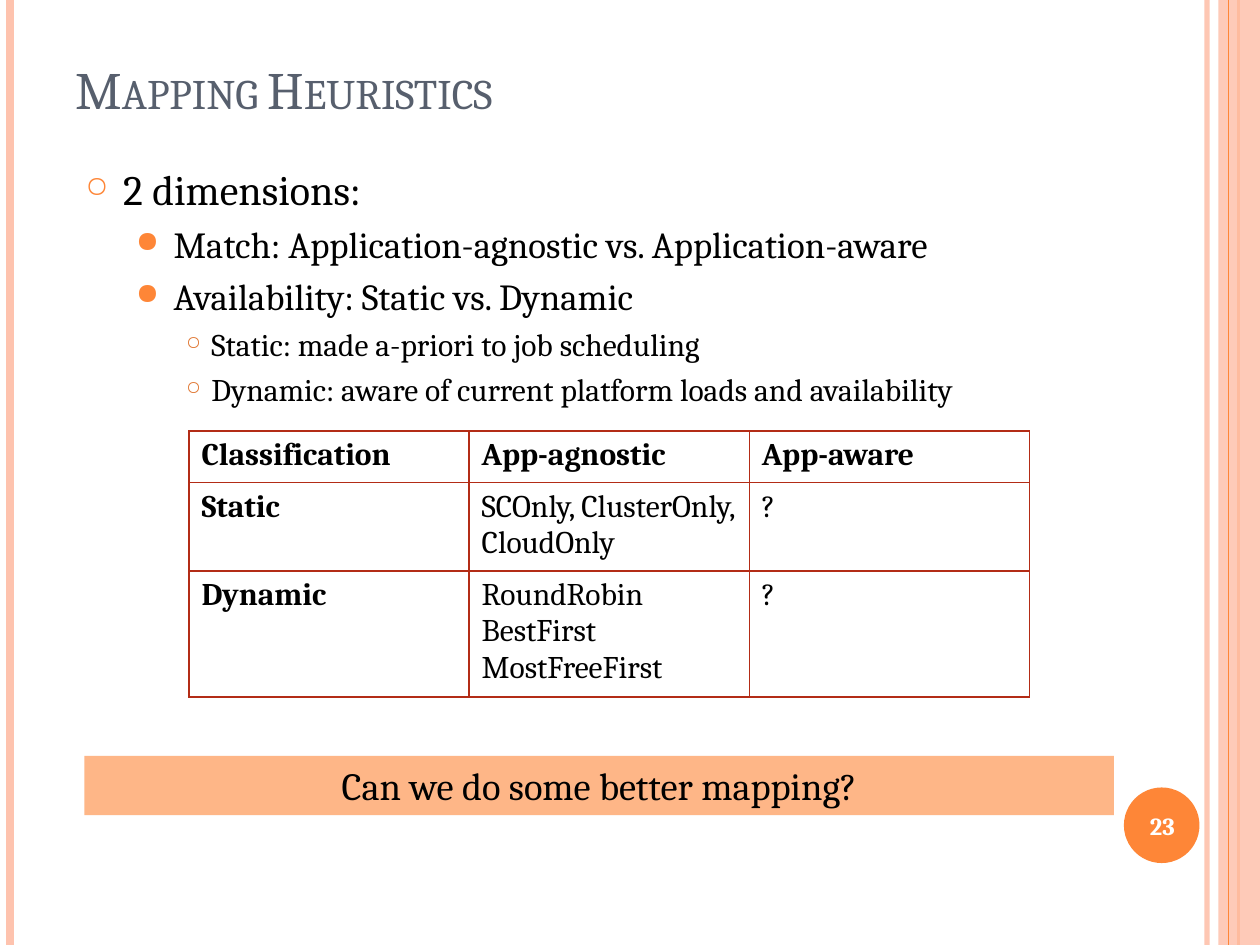
from lxml.etree import SubElement
from pptx import Presentation
from pptx.dml.color import RGBColor
from pptx.enum.shapes import MSO_CONNECTOR, MSO_SHAPE
from pptx.enum.text import MSO_ANCHOR, PP_ALIGN
from pptx.oxml.ns import qn
from pptx.util import Inches, Pt

FONT = "Cambria"
BLACK = "000000"
ORANGE = "FE8637"
PEACH = "FEC3AE"
RUST = "B32C16"


def colour(value):
    return RGBColor.from_string(value)


def add_node(parent, tag, **values):
    return SubElement(parent, qn(tag), values)


def set_opacity(element, percent):
    for node in element.iter(qn("a:srgbClr")):
        add_node(node, "a:alpha", val=str(percent * 1000))


class SlideBuilder:
    def __init__(self, page):
        self.page = page

    def add_span(self, para, text, size, ink=BLACK, bold=False):
        span = para.add_run()
        span.text = text
        for name, value in {"name": FONT, "size": Pt(size), "bold": bold}.items():
            setattr(span.font, name, value)
        span.font.color.rgb = colour(ink)
        return span

    def vertical_line(self, left, ink, width, opacity=100):
        line = self.page.shapes.add_connector(
            MSO_CONNECTOR.STRAIGHT, Inches(left), 0, Inches(left), Inches(7.5))
        line.line.color.rgb = colour(ink)
        line.line.width = Pt(width)
        properties = line._element.spPr
        if opacity < 100:
            set_opacity(properties, opacity)
        add_node(properties, "a:effectLst")

    def block(self, kind, place, ink, opacity=100):
        shape = self.page.shapes.add_shape(kind, *map(Inches, place))
        shape.shadow.inherit = False
        shape.fill.solid()
        shape.fill.fore_color.rgb = colour(ink)
        shape.line.fill.background()
        if opacity < 100:
            set_opacity(shape._element.spPr, opacity)
        return shape

    def text_box(self, place, anchor=MSO_ANCHOR.TOP):
        frame = self.page.shapes.add_textbox(*map(Inches, place)).text_frame
        frame.word_wrap = True
        frame.vertical_anchor = anchor
        return frame

    def bullet(self, para, text, style):
        para.space_before = Pt(style["before"])
        properties = para._p.get_or_add_pPr()
        properties.set("marL", str(Inches(style["margin"])))
        properties.set("indent", str(-Inches(style["hang"])))
        tint = add_node(properties, "a:buClr")
        add_node(tint, "a:srgbClr", val=style["tint"])
        add_node(properties, "a:buSzPct", val=str(style["scale"] * 1000))
        add_node(properties, "a:buChar", char=style["mark"])
        self.add_span(para, text, style["size"])

    def table(self, place, heights, rows):
        table = self.page.shapes.add_table(
            len(rows), len(rows[0]), *map(Inches, place)).table
        table.first_row = table.horz_banding = False
        for row, height in zip(table.rows, heights):
            row.height = Inches(height)
        for r, row in enumerate(rows):
            for c, text in enumerate(row):
                self.cell(table.cell(r, c), text, bold=r == 0 or c == 0)

    def cell(self, cell, text, bold):
        properties = cell._tc.get_or_add_tcPr()
        for side in "LRTB":
            border = add_node(properties, f"a:ln{side}", w=str(Pt(1)))
            fill = add_node(border, "a:solidFill")
            add_node(fill, "a:srgbClr", val=RUST)
        cell.fill.background()
        frame = cell.text_frame
        for i, line in enumerate(text.split("\n")):
            para = frame.add_paragraph() if i else frame.paragraphs[0]
            self.add_span(para, line, 18, bold=bold)


LEVELS = [
    {"size": 24, "margin": 0.3, "hang": 0.3, "before": 6,
     "mark": "○", "scale": 70, "tint": ORANGE},
    {"size": 21, "margin": 0.7, "hang": 0.3, "before": 4.5,
     "mark": "●", "scale": 80, "tint": ORANGE},
    {"size": 18, "margin": 1, "hang": 0.2, "before": 4,
     "mark": "○", "scale": 60, "tint": "E07631"},
]
POINTS = [
    (0, "2 dimensions:"),
    (1, "Match: Application-agnostic vs. Application-aware"),
    (1, "Availability: Static vs. Dynamic"),
    (2, "Static: made a-priori to job scheduling"),
    (2, "Dynamic: aware of current platform loads and availability"),
]
HEURISTICS = [
    ("Classification", "App-agnostic", "App-aware"),
    ("Static", "SCOnly, ClusterOnly, CloudOnly", "?"),
    ("Dynamic", "RoundRobin\nBestFirst\nMostFreeFirst", "?"),
]


def main():
    deck = Presentation()
    deck.slide_width, deck.slide_height = Inches(10), Inches(7.5)
    builder = SlideBuilder(deck.slides.add_slide(deck.slide_layouts[6]))

    builder.vertical_line(9.58, PEACH, 3, opacity=93)
    builder.vertical_line(0.08, PEACH, 4.5)
    builder.vertical_line(9.83, ORANGE, 1.5)
    builder.block(MSO_SHAPE.RECTANGLE, (9.67, 0, 0.33, 7.5), PEACH, opacity=87)
    builder.vertical_line(9.75, ORANGE, 0.75)
    builder.block(MSO_SHAPE.OVAL, (8.92, 6.25, 0.6, 0.6), ORANGE)

    title = builder.text_box((0.5, -0.25, 8.17, 1.25), MSO_ANCHOR.BOTTOM)
    span = builder.add_span(title.paragraphs[0], "Mapping Heuristics", 30, "575F6D")
    span.font._element.set("cap", "small")

    number = builder.text_box((8.89, 6.27, 0.67, 0.57), MSO_ANCHOR.MIDDLE)
    number.paragraphs[0].alignment = PP_ALIGN.CENTER
    builder.add_span(number.paragraphs[0], "23", 14, "FFFFFF", bold=True)

    body = builder.text_box((0.58, 1.25, 9.13, 2.42))
    for i, (level, text) in enumerate(POINTS):
        para = body.add_paragraph() if i else body.paragraphs[0]
        para.level = level
        builder.bullet(para, text, LEVELS[level])

    builder.table((1.5, 3.42, 6.67, 2.05), (0.41, 0.68, 0.96), HEURISTICS)

    banner = builder.block(MSO_SHAPE.RECTANGLE, (0.67, 6, 8.17, 0.47), "FEB687")
    para = banner.text_frame.paragraphs[0]
    para.alignment = PP_ALIGN.CENTER
    builder.add_span(para, "Can we do some better mapping?", 22)

    deck.save("out.pptx")


if __name__ == "__main__":
    main()
